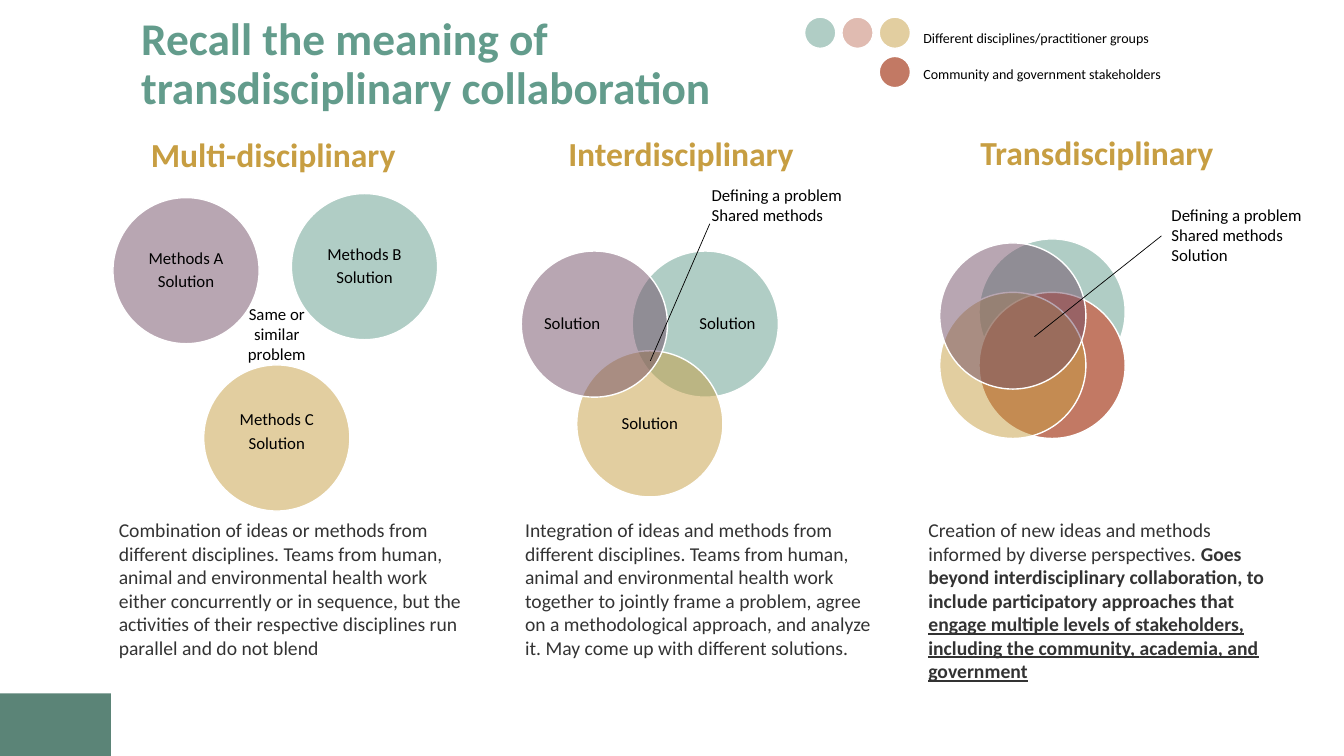
from lxml import etree
from pptx import Presentation
from pptx import util as u
from pptx.dml import color
from pptx.enum import shapes, text
from pptx.oxml import ns

SCALE = 9144
PLUM, GREEN, GOLD, RED = "724E66", "639C8C", "C79E42", "C27964"
BLACK, GREY, WHITE = "000000", "333333", "FFFFFF"
MID = text.PP_ALIGN.CENTER
LEFT = text.PP_ALIGN.LEFT
HEAD = {"size": 24, "bold": True, "tint": GOLD}
NOTE = {"size": 12, "tint": BLACK}
BODY = {"size": 14, "tint": GREY}
KEY = {"size": 10, "tint": BLACK}
DISC = 145

COLUMNS = [
    {
        "x": 108,
        "head": ("Multi-disciplinary", 2, 2, 322),
        "discs": [
            (181, 106, GREEN, 50, ["Methods B", "Solution"], {}),
            (94, 276, GOLD, 50, ["Methods C", "Solution"], {"margin_bottom": 12}),
            (4, 110, PLUM, 50, ["Methods A", "Solution"], {}),
        ],
        "note": (["Same or similar problem"], (109, 210, 115, 71), MID, True),
        "line": None,
        "body": [
            ("Combination of ideas or methods from different disciplines. Teams from "
             "human, animal and environmental health work either concurrently or in "
             "sequence, but the activities of their respective disciplines run "
             "parallel and do not blend", {}),
        ],
    },
    {
        "x": 511,
        "head": ("Interdisciplinary", 26, 1, 277),
        "discs": [
            (116, 163, GREEN, 50, ["Solution"], {"margin_left": 44}),
            (61, 262, GOLD, 50, ["Solution"], {}),
            (6, 163, PLUM, 50, ["Solution"], {"margin_right": 44}),
        ],
        "note": (["Defining a problem", "Shared methods"],
                 (185, 92, 151, 50), LEFT, False),
        "line": (134, 272, 193, 136),
        "body": [
            ("Integration of ideas and methods from different disciplines. Teams from "
             "human, animal and environmental health work together to jointly frame a "
             "problem, agree on a methodological approach, and analyze it. May come up "
             "with different solutions.", {}),
        ],
    },
    {
        "x": 911,
        "head": ("Transdisciplinary", -43, 0, 440),
        "discs": [
            (60, 151, GREEN, 50, [], {}),
            (60, 204, RED, 100, [], {}),
            (21, 204, GOLD, 50, [], {}),
            (21, 155, PLUM, 50, [], {}),
        ],
        "note": (["Defining a problem", "Shared methods", "Solution"],
                 (241, 112, 151, 71), LEFT, False),
        "line": (115, 248, 241, 148),
        "body": [
            ("Creation of new ideas and methods informed by diverse perspectives. ", {}),
            ("Goes beyond interdisciplinary collaboration, to include participatory "
             "approaches that ", {"bold": True}),
            ("engage multiple levels of stakeholders, including the community, "
             "academia, and government", {"bold": True, "underline": True}),
        ],
    },
]


def px(*vals):
    """Turn px lengths into EMU."""
    return [u.Emu(val * SCALE) for val in vals]


def tint(hue):
    """Turn a hex string into a colour."""
    return color.RGBColor.from_string(hue)


def style(font, form):
    """Apply a dict of format values to a font."""
    font.name = "Calibri"
    for name, val in form.items():
        if name == "tint":
            font.color.rgb = tint(val)
        else:
            setattr(font, name, u.Pt(val) if name == "size" else val)


def write(frame, paras, form, align=LEFT, space=1, gap=0):
    """Fill a frame with paragraphs, each a list of (words, format) runs."""
    for num, runs in enumerate(paras):
        para = frame.add_paragraph() if num else frame.paragraphs[0]
        para.alignment = align
        para.line_spacing = space
        if num:
            para.space_before = u.Pt(gap)
        for words, extra in runs:
            run = para.add_run()
            run.text = words
            style(run.font, {**form, **extra})


def label(slide, box, paras, form, align=LEFT, wrap=True, **more):
    """Add a text box."""
    frame = slide.shapes.add_textbox(*px(*box)).text_frame
    frame.word_wrap = wrap
    write(frame, paras, form, align, **more)
    return frame


def block(slide, kind, box, hue, alpha=100, edge=None):
    """Add a filled preset shape."""
    item = slide.shapes.add_shape(kind, *px(*box))
    item.shadow.inherit = False
    item.fill.solid()
    item.fill.fore_color.rgb = tint(hue)
    if alpha < 100:
        node = item._element.spPr.find(ns.qn("a:solidFill"))[0]
        etree.SubElement(node, ns.qn("a:alpha"), val=str(alpha * 1000))
    if edge:
        item.line.color.rgb = tint(edge)
        item.line.width = u.Pt(1)
    else:
        item.line.fill.background()
    return item


def disc(slide, x, y, size, hue, alpha, lines=(), inset=None):
    """Add a white-edged circle with optional lines of text."""
    item = block(slide, shapes.MSO_SHAPE.OVAL, (x, y, size, size), hue, alpha, WHITE)
    frame = item.text_frame
    sides = dict.fromkeys(
        ("margin_left", "margin_top", "margin_right", "margin_bottom"), 0)
    for name, val in {**sides, **(inset or {})}.items():
        setattr(frame, name, px(val)[0])
    frame.vertical_anchor = text.MSO_ANCHOR.MIDDLE
    write(frame, [[(line, {})] for line in lines], NOTE, MID, space=0.9, gap=4)


def lead(slide, ends):
    """Add a thin black leader line."""
    item = slide.shapes.add_connector(shapes.MSO_CONNECTOR.STRAIGHT, *px(*ends))
    item.line.color.rgb = tint(BLACK)
    item.line.width = u.Pt(0.5)
    etree.SubElement(item._element.spPr, ns.qn("a:effectLst"))


def title(slide, box):
    """Place the slide title."""
    item = slide.shapes.title
    item.left, item.top, item.width, item.height = px(*box)
    frame = item.text_frame
    frame.auto_size = text.MSO_AUTO_SIZE.NONE
    frame.vertical_anchor = text.MSO_ANCHOR.MIDDLE
    words = "Recall the meaning of transdisciplinary collaboration"
    write(frame, [[(words, {})]], {"size": 32.4, "bold": True, "tint": GREEN},
          space=0.9)


def legend(slide, x, y):
    """Draw the colour key."""
    for num, hue in enumerate((GREEN, RED, GOLD)):
        disc(slide, x + 37 * num, y, 31, hue, 50)
    disc(slide, x + 74, y + 39, 31, RED, 100)
    rows = (("Different disciplines/practitioner groups", 248),
            ("Community and government stakeholders", 260))
    for num, (words, wide) in enumerate(rows):
        label(slide, (x + 108, y + 7 + 36 * num, wide, 27),
              [[(words, {})]], KEY, wrap=False)


def column(slide, x, y, data):
    """Draw one kind of collaboration: heading, circles, note and description."""
    words, dx, dy, wide = data["head"]
    frame = label(slide, (x + dx, y + dy, wide, 90), [[(words, {})]], HEAD, MID,
                  space=0.9)
    frame.vertical_anchor = text.MSO_ANCHOR.BOTTOM
    for dx, dy, hue, alpha, lines, inset in data["discs"]:
        disc(slide, x + dx, y + dy, DISC, hue, alpha, lines, inset)
    label(slide, (x, y + 423, 374, 151), [data["body"]], BODY)
    lines, (dx, dy, wide, high), align, wrap = data["note"]
    label(slide, (x + dx, y + dy, wide, high), [[(line, {})] for line in lines],
          NOTE, align, wrap)
    if data["line"]:
        ax, ay, bx, by = data["line"]
        lead(slide, (x + ax, y + ay, x + bx, y + by))


def main():
    """Build and save the slide."""
    deck = Presentation()
    deck.slide_width, deck.slide_height = px(1333, 750)
    slide = deck.slides.add_slide(deck.slide_layouts[5])
    block(slide, shapes.MSO_SHAPE.RECTANGLE, (0, 688, 110, 62), "5B8477")
    title(slide, (130, 29, 642, 71))
    for data in COLUMNS:
        column(slide, data["x"], 86, data)
    legend(slide, 798, 17)
    deck.save("out.pptx")


if __name__ == "__main__":
    main()
